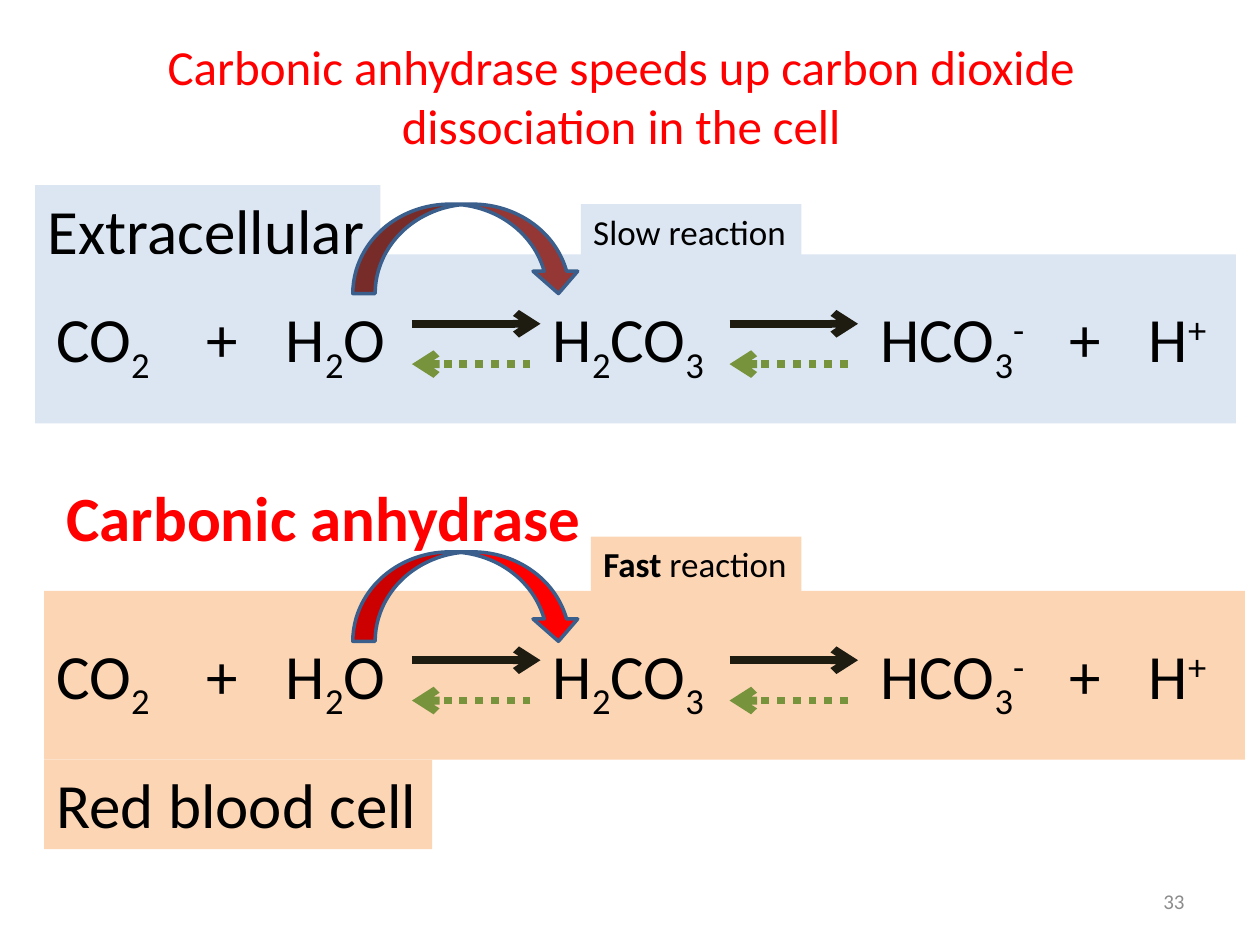
from pptx import Presentation
from pptx.dml.color import RGBColor
from pptx.enum.dml import MSO_LINE
from pptx.enum.shapes import MSO_CONNECTOR, MSO_SHAPE
from pptx.enum.text import MSO_ANCHOR, MSO_AUTO_SIZE, PP_ALIGN
from pptx.oxml.ns import qn
from pptx.util import Inches, Pt
from lxml import etree

RECTANGLE, CURVED_ARROW = MSO_SHAPE.RECTANGLE, MSO_SHAPE.CURVED_DOWN_ARROW
STRAIGHT = MSO_CONNECTOR.STRAIGHT
SOLID, DOTTED = MSO_LINE.SOLID, MSO_LINE.ROUND_DOT
LEFT, CENTER, RIGHT = PP_ALIGN.LEFT, PP_ALIGN.CENTER, PP_ALIGN.RIGHT
TOP, MIDDLE = MSO_ANCHOR.TOP, MSO_ANCHOR.MIDDLE
FIT_SHAPE, NO_FIT = MSO_AUTO_SIZE.SHAPE_TO_FIT_TEXT, MSO_AUTO_SIZE.NONE

BLACK = RGBColor(0x00, 0x00, 0x00)
RED = RGBColor(0xFF, 0x00, 0x00)
MAROON = RGBColor(0x95, 0x37, 0x35)
PALE_BLUE = RGBColor(0xDC, 0xE6, 0xF2)
PALE_ORANGE = RGBColor(0xFC, 0xD5, 0xB5)
OUTLINE_BLUE = RGBColor(0x3A, 0x5F, 0x8C)
DARK_BROWN = RGBColor(0x1E, 0x1C, 0x11)
GREEN = RGBColor(0x77, 0x93, 0x3C)
GRAY = RGBColor(0x8C, 0x8C, 0x8C)

COLUMNS, ROWS = 100, 75
SUB, SUPER = -25000, 30000
LINE_HEIGHT, SMALL_HEIGHT = 7.1, 4.4
PANEL_WIDTH, PANEL_HEIGHT = 95.3, 13.4

TERMS = [
    (3.5, 9.7, [("CO", {}), ("2", {"baseline": SUB})]),
    (15.4, 4.5, [("+", {})]),
    (21.7, 10.2, [("H", {}), ("2", {"baseline": SUB}), ("O", {})]),
    (42.9, 14.6, [("H", {}), ("2", {"baseline": SUB}), ("CO", {}), ("3", {"baseline": SUB})]),
    (68.9, 14.4, [("HCO", {}), ("3", {"baseline": SUB}), ("-", {"baseline": SUPER})]),
    (83.9, 4.5, [("+", {})]),
    (90.2, 6.8, [("H", {}), ("+", {"baseline": SUPER})]),
]
REACTION_STARTS = (32.7, 57.9)


class SlideBuilder:
    """Holds the style and the current slide, and places elements on a grid."""

    def __init__(self, deck):
        """Add a title-only page to the deck."""
        self.font = "Calibri"
        self.column = deck.slide_width / COLUMNS
        self.row = deck.slide_height / ROWS
        self.page = deck.slides.add_slide(deck.slide_layouts[5])

    def place(self, left, top, width, height):
        """Turn grid columns and rows into lengths."""
        pairs = ((left, self.column), (top, self.row), (width, self.column), (height, self.row))
        return [round(count * unit) for count, unit in pairs]

    def set_text(self, box, spans, size=36, color=BLACK, align=LEFT, anchor=TOP, wrap=False):
        """Fill a box with one paragraph of formatted spans."""
        frame = {"word_wrap": wrap, "vertical_anchor": anchor,
                 "auto_size": NO_FIT if wrap else FIT_SHAPE}
        for name, value in frame.items():
            setattr(box.text_frame, name, value)
        para = box.text_frame.paragraphs[0]
        para.alignment = align
        for text, changes in spans:
            span = para.add_run()
            span.text = text
            style = {"name": self.font, "size": Pt(size), **changes}
            baseline = style.pop("baseline", None)
            for name, value in style.items():
                setattr(span.font, name, value)
            span.font.color.rgb = color
            if baseline:
                span.font._element.set("baseline", str(baseline))

    def title(self, area, text):
        """Move and format the title placeholder."""
        box = self.page.shapes.title
        for name, value in zip(("left", "top", "width", "height"), self.place(*area)):
            setattr(box, name, value)
        self.set_text(box, [(text, {})], 28, RED, CENTER, MIDDLE, True)

    def text(self, area, spans, **style):
        """Add a text box."""
        self.set_text(self.page.shapes.add_textbox(*self.place(*area)), spans, **style)

    def shape(self, kind, area, fill, outline=None):
        """Add a filled preset shape."""
        shape = self.page.shapes.add_shape(kind, *self.place(*area))
        shape.shadow.inherit = False
        shape.fill.solid()
        shape.fill.fore_color.rgb = fill
        if outline is None:
            shape.line.fill.background()
        else:
            shape.line.color.rgb = outline
            shape.line.width = Pt(2)
        return shape

    def label(self, area, fill, spans, **style):
        """Add a filled rectangle with text."""
        self.set_text(self.shape(RECTANGLE, area, fill), spans, **style)

    def arrow(self, start, end, level, color, dash):
        """Add a horizontal arrow from start to end."""
        x1, y1, x2, y2 = self.place(start, level, end, level)
        line = self.page.shapes.add_connector(STRAIGHT, x1, y1, x2, y2)
        for name, value in {"width": Pt(4.5), "dash_style": dash}.items():
            setattr(line.line, name, value)
        line.line.color.rgb = color
        etree.SubElement(line.line._get_or_add_ln(), qn("a:tailEnd"), type="arrow")
        etree.SubElement(line._element.spPr, qn("a:effectLst"))

    def equation(self, top):
        """Add the terms and reversible arrows of the reaction in a panel."""
        for left, width, spans in TERMS:
            self.text((left, top + 3.1, width, LINE_HEIGHT), spans)
        for start in REACTION_STARTS:
            self.arrow(start, start + 10.2, top + 5.5, DARK_BROWN, SOLID)
            self.arrow(start + 9.4, start, top + 8.7, GREEN, DOTTED)

    def reaction(self, left, top, fill, arc_top, arc_fill):
        """Add a panel with its equation and curved arrow."""
        self.shape(RECTANGLE, (left, top, PANEL_WIDTH, PANEL_HEIGHT), fill)
        self.equation(top)
        self.shape(CURVED_ARROW, (28, arc_top, 18.1, LINE_HEIGHT), arc_fill, OUTLINE_BLUE)


def main():
    """Build and save the deck."""
    deck = Presentation()
    deck.slide_width, deck.slide_height = Inches(10), Inches(7.5)
    slide = SlideBuilder(deck)
    slide.title((4.3, 1.3, 90, 12.5),
                "Carbonic anhydrase speeds up carbon dioxide dissociation in the cell")

    slide.label((2.8, 14.7, 27.4, LINE_HEIGHT), PALE_BLUE, [("Extracellular", {})])
    slide.reaction(2.8, 20.2, PALE_BLUE, 16.2, MAROON)
    slide.label((46.1, 16.2, 17.5, SMALL_HEIGHT), PALE_BLUE, [("Slow reaction", {})], size=20)

    slide.text((4.3, 37.5, 43.5, LINE_HEIGHT), [("Carbonic anhydrase", {"bold": True})], color=RED)
    slide.reaction(3.5, 46.9, PALE_ORANGE, 43.8, RED)
    slide.label((3.5, 60.3, 30.8, LINE_HEIGHT), PALE_ORANGE, [("Red blood cell", {})])
    slide.label((46.9, 42.6, 16.7, SMALL_HEIGHT), PALE_ORANGE,
                [("Fast ", {"bold": True}), ("reaction", {})], size=20)

    slide.text((71.7, 69.5, 23.3, 4), [("33", {})], size=12, color=GRAY,
               align=RIGHT, anchor=MIDDLE, wrap=True)
    deck.save("out.pptx")


if __name__ == "__main__":
    main()
